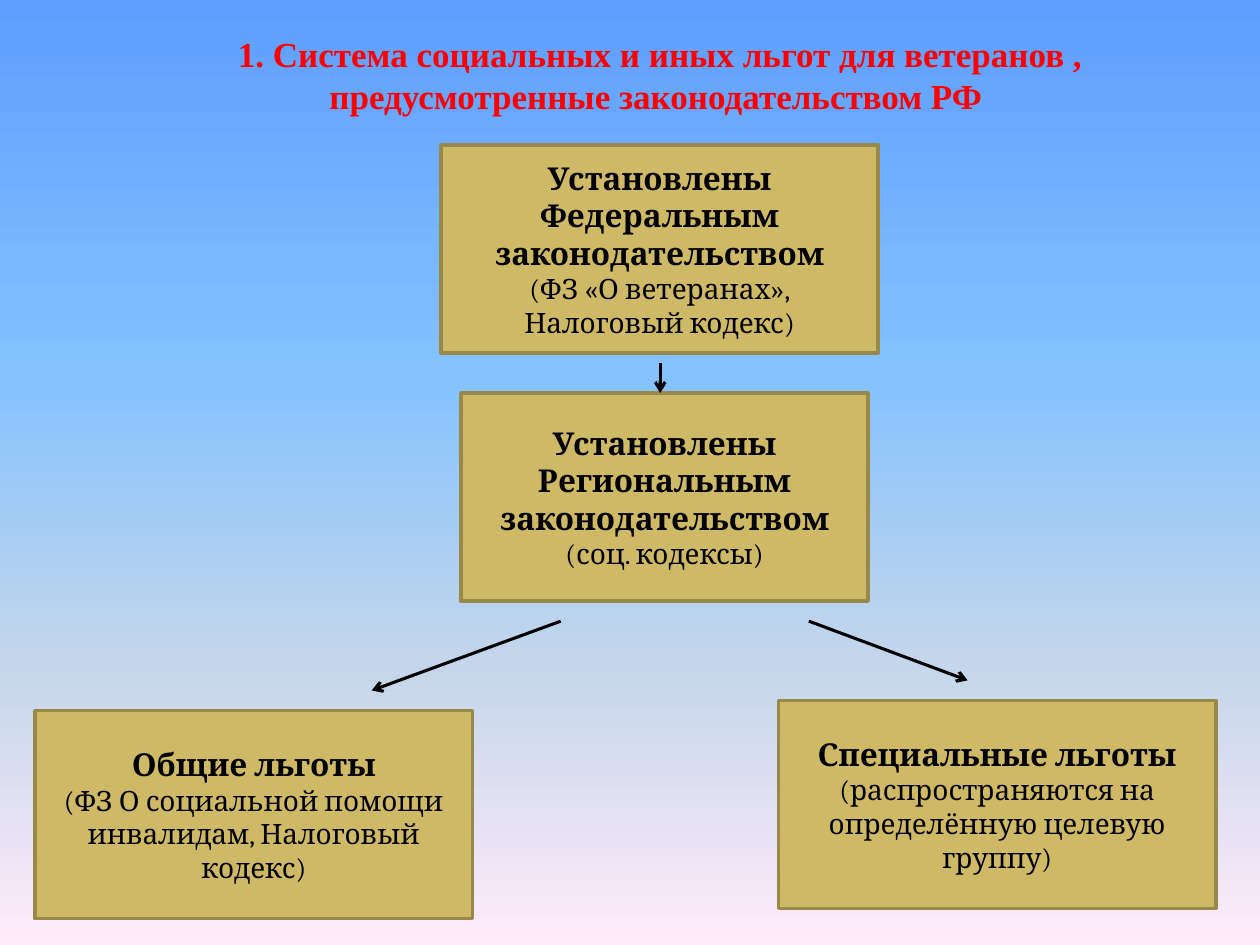
from copy import deepcopy
from pptx import Presentation
from pptx.dml.color import RGBColor
from pptx.enum.shapes import MSO_CONNECTOR, MSO_SHAPE
from pptx.enum.text import MSO_ANCHOR, MSO_AUTO_SIZE, PP_ALIGN
from pptx.oxml.ns import qn
from pptx.util import Inches, Pt
from lxml.etree import SubElement

TITLE = ("1. Система социальных и иных льгот для ветеранов , "
         "предусмотренные законодательством РФ ")
HIGH = 1.65
# left, top, width, heading, detail
BOXES = [
    (3.5, 1.15, 3.47, "Установлены Федеральным законодательством",
     "(ФЗ «О ветеранах», Налоговый кодекс)"),
    (3.66, 3.12, 3.23, "Установлены Региональным законодательством",
     "(соц. кодексы)"),
    (0.28, 5.64, 3.47, "Общие льготы",
     "(ФЗ О социальной помощи инвалидам, Налоговый кодекс)"),
    (6.18, 5.56, 3.47, "Специальные льготы",
     "(распространяются на определённую целевую группу)"),
]
# start x, start y, end x, end y
ARROWS = [
    (5.24, 2.88, 5.24, 3.12),
    (6.42, 4.93, 7.68, 5.4),
    (4.45, 4.93, 2.95, 5.48),
]
# position in percent, colour
SKY = [(0, "5E9EFF"), (40, "85C2FF"), (70, "C4D6EB"), (100, "FFEBFA")]


def color(code):
    return RGBColor.from_string(code)


def write(para, text, font, size, code, bold):
    para.text = text
    para.alignment = PP_ALIGN.CENTER
    para.font.name = font
    para.font.size = Pt(size)
    para.font.bold = bold
    para.font.color.rgb = color(code)


def paint(slide):
    fill = slide.background.fill
    fill.gradient()
    fill.gradient_angle = 270
    stops = next(slide.element.iter(qn("a:gsLst")))
    while len(stops) < len(SKY):
        stops.append(deepcopy(stops[0]))
    for node, (pos, code) in zip(stops, SKY):
        for child in list(node):
            node.remove(child)
        node.set("pos", str(pos * 1000))
        SubElement(node, qn("a:srgbClr"), val=code)


def add_title(slide):
    box = slide.shapes.add_textbox(*map(Inches, (1.54, 0.21, 7.4, 0.77)))
    frame = box.text_frame
    frame.word_wrap = True
    frame.auto_size = MSO_AUTO_SIZE.SHAPE_TO_FIT_TEXT
    write(frame.paragraphs[0], TITLE, "Times New Roman", 20, "FF0000", True)


def add_box(slide, left, top, width, head, detail):
    box = slide.shapes.add_shape(
        MSO_SHAPE.RECTANGLE, *map(Inches, (left, top, width, HIGH)))
    box.shadow.inherit = False
    box.fill.solid()
    box.fill.fore_color.rgb = color("CEB966")
    box.line.color.rgb = color("98894B")
    box.line.width = Pt(2)
    frame = box.text_frame
    frame.word_wrap = True
    frame.vertical_anchor = MSO_ANCHOR.MIDDLE
    write(frame.paragraphs[0], head, "Cambria", 18, "000000", True)
    write(frame.add_paragraph(), detail, "Cambria", 16, "000000", False)


def add_arrow(slide, ends):
    arrow = slide.shapes.add_connector(
        MSO_CONNECTOR.STRAIGHT, *map(Inches, ends))
    arrow.line.color.rgb = color("000000")
    arrow.line.width = Pt(1.75)
    SubElement(arrow.line._get_or_add_ln(), qn("a:tailEnd"), type="arrow")
    SubElement(arrow._element.spPr, qn("a:effectLst"))


def main():
    deck = Presentation()
    deck.slide_width, deck.slide_height = Inches(10), Inches(7.5)
    slide = deck.slides.add_slide(deck.slide_layouts[6])
    paint(slide)
    add_title(slide)
    for box in BOXES:
        add_box(slide, *box)
    for ends in ARROWS:
        add_arrow(slide, ends)
    deck.save("out.pptx")


if __name__ == "__main__":
    main()
